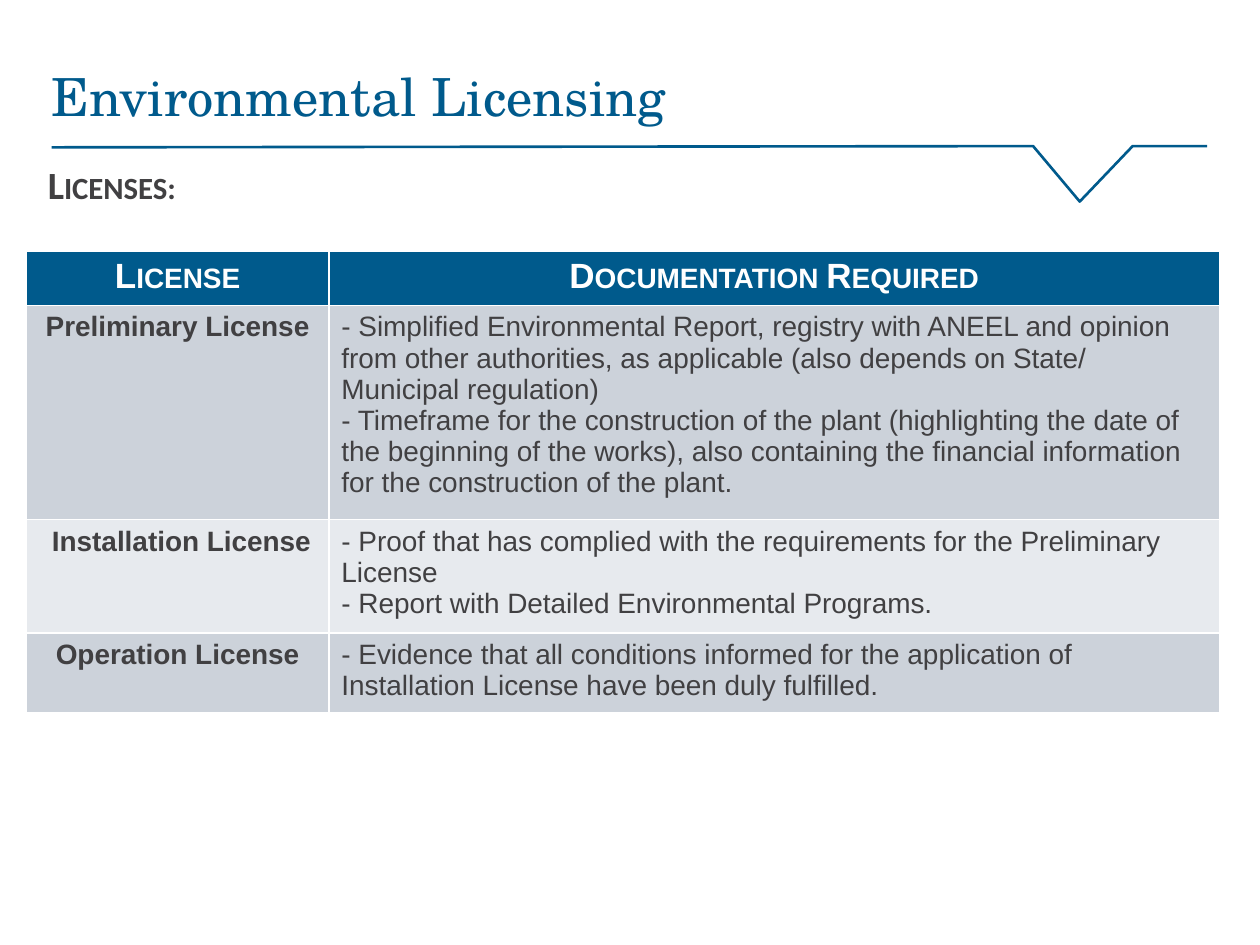
import pptx
import pptx.dml.color
import pptx.enum.text
import pptx.util

COLORS = {
    "blue": "005A8C",
    "text": "414042",
    "white": "FFFFFF",
    "band_dark": "CCD2DA",
    "band_light": "E7EAEE",
}
HEADINGS = ["License", "Documentation Required"]
LICENSES = [
    ("Preliminary License", [
        "- Simplified Environmental Report, registry with ANEEL and opinion from "
        "other authorities, as applicable (also depends on State/ Municipal regulation)",
        "- Timeframe for the construction of the plant (highlighting the date of the "
        "beginning of the works), also containing the financial information for the "
        "construction of the plant.",
    ]),
    (" Installation License", [
        "- Proof that has complied with the requirements for the Preliminary License",
        "- Report with Detailed Environmental Programs.",
    ]),
    ("Operation License", [
        "- Evidence that all conditions informed for the application of "
        " Installation License have been duly fulfilled.",
    ]),
]
COLUMN_WIDTHS = [2.4, 7.07]
ROW_HEIGHTS = [0.4, 1.7, 0.82, 0.63]
RULE_POINTS = [(9.58, 1.16), (8.99, 1.16), (8.57, 1.6), (8.2, 1.16), (0.41, 1.17)]


def inches(*lengths):
    return [pptx.util.Inches(length) for length in lengths]


def color(name):
    return pptx.dml.color.RGBColor.from_string(COLORS[name])


def style_paragraph(para, font, size, color_name, bold=False, small_caps=False):
    for span in para.runs:
        span.font.name = font
        span.font.size = pptx.util.Pt(size)
        span.font.bold = bold
        span.font.color.rgb = color(color_name)
        if small_caps:
            span._r.get_or_add_rPr().set("cap", "small")


def add_rule(page):
    """Draw the line under the title with its V-shaped notch."""
    points = [inches(*point) for point in RULE_POINTS]
    builder = page.shapes.build_freeform(*points[0])
    builder.add_line_segments(points[1:], close=False)
    rule = builder.convert_to_shape()
    rule.shadow.inherit = False
    rule.fill.solid()
    rule.fill.fore_color.rgb = color("white")
    rule.line.color.rgb = color("blue")
    rule.line.width = pptx.util.Pt(1.5)


def add_text(page, area, text, **style):
    frame = page.shapes.add_textbox(*inches(*area)).text_frame
    frame.word_wrap = True
    frame.margin_left = frame.margin_top = frame.margin_right = frame.margin_bottom = 0
    frame.text = text
    style_paragraph(frame.paragraphs[0], **style)


def fill_cell(cell, lines, fill, centered=False, **style):
    cell.fill.solid()
    cell.fill.fore_color.rgb = color(fill)
    cell.text_frame.text = "\n".join(lines)
    for para in cell.text_frame.paragraphs:
        if centered:
            para.alignment = pptx.enum.text.PP_ALIGN.CENTER
        style_paragraph(para, font="Arial", **style)


def add_license_table(page):
    area = inches(0.21, 1.99, sum(COLUMN_WIDTHS), sum(ROW_HEIGHTS))
    table = page.shapes.add_table(len(ROW_HEIGHTS), len(COLUMN_WIDTHS), *area).table
    for column, width in zip(table.columns, COLUMN_WIDTHS):
        column.width = pptx.util.Inches(width)
    for row, height in zip(table.rows, ROW_HEIGHTS):
        row.height = pptx.util.Inches(height)

    for column, heading in enumerate(HEADINGS):
        fill_cell(table.cell(0, column), [heading], "blue", centered=True,
                  size=20, color_name="white", bold=True, small_caps=True)
    for row, (name, documents) in enumerate(LICENSES, start=1):
        band = "band_dark" if row % 2 else "band_light"
        fill_cell(table.cell(row, 0), [name], band, centered=True,
                  size=16, color_name="text", bold=True)
        fill_cell(table.cell(row, 1), documents, band, size=16, color_name="text")


def main():
    deck = pptx.Presentation()
    deck.slide_width, deck.slide_height = inches(10, 7.5)
    page = deck.slides.add_slide(deck.slide_layouts[6])
    add_rule(page)
    add_text(page, (0.41, 0.51, 8.96, 0.88), "Environmental Licensing",
             font="TeX Gyre Schola", size=30, color_name="blue")
    add_text(page, (0.38, 1.28, 8.99, 5.43), "Licenses:",
             font="Calibri", size=22, color_name="text", bold=True, small_caps=True)
    add_license_table(page)
    deck.save("out.pptx")


if __name__ == "__main__":
    main()
